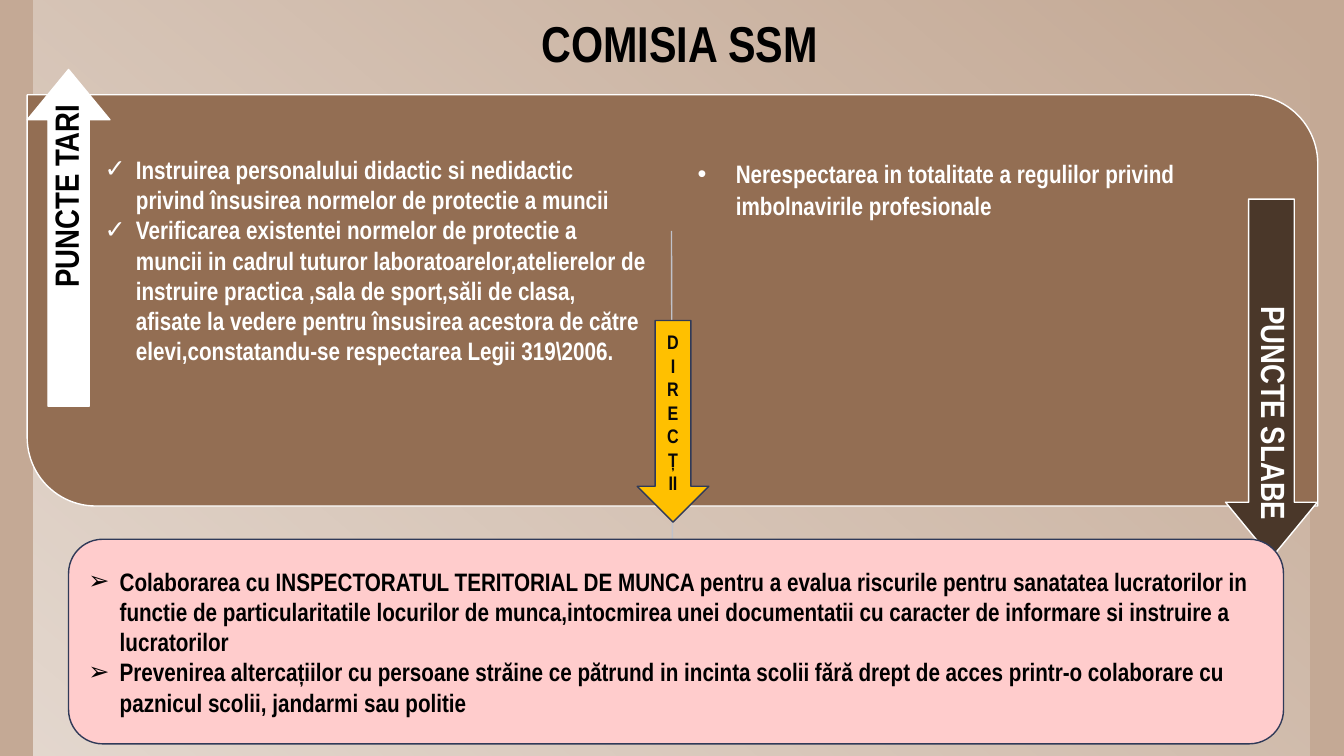
import pptx
import pptx.dml.color
import pptx.enum.shapes
import pptx.enum.text
import pptx.oxml.ns
import pptx.util
from dataclasses import dataclass
from lxml import etree

Inches, Pt = pptx.util.Inches, pptx.util.Pt
SHAPE = pptx.enum.shapes.MSO_SHAPE
ANCHOR = pptx.enum.text.MSO_ANCHOR
ALIGN = pptx.enum.text.PP_ALIGN
qn = pptx.oxml.ns.qn


@dataclass(frozen=True)
class Theme:
    font: str = "Arial Narrow"
    background: str = "C4A995"
    white: str = "FFFFFF"
    black: str = "000000"
    panel: str = "936E53"
    weak: str = "4A3729"
    pink: str = "FFCCCC"
    gold: str = "FFC000"
    gold_text: str = "080808"
    outline: str = "303A58"
    divider: str = "C0C2CA"
    title_size: int = 36
    label_size: int = 24
    body_size: int = 18
    small_size: int = 14


def rgb(color):
    return pptx.dml.color.RGBColor.from_string(color)


class SlideBuilder:
    def __init__(self, slide, theme):
        self.slide = slide
        self.theme = theme
        fill = slide.background.fill
        fill.solid()
        fill.fore_color.rgb = rgb(theme.background)

    def shape(self, kind, box, fill=None, line=None, adj=(), rotation=0):
        sp = self.slide.shapes.add_shape(kind, *map(Inches, box))
        sp.shadow.inherit = False
        sp.rotation = rotation
        for i, value in enumerate(adj):
            sp.adjustments[i] = value
        if fill:
            sp.fill.solid()
            sp.fill.fore_color.rgb = rgb(fill)
        if line:
            sp.line.color.rgb = rgb(line)
            sp.line.width = Pt(1)
        else:
            sp.line.fill.background()
        return sp

    def glow(self, box, angle, opacities):
        sp = self.shape(SHAPE.RECTANGLE, box)
        sp.fill.gradient()
        sp.fill.gradient_angle = 360 - angle  # clockwise to counter-clockwise
        for stop in sp.fill.gradient_stops:
            stop.color.rgb = rgb(self.theme.white)
        for color, opacity in zip(sp._element.spPr.iter(qn("a:srgbClr")), opacities):
            etree.SubElement(color, qn("a:alpha"), val=str(opacity * 1000))

    def line(self, start, end, color):
        cx = self.slide.shapes.add_connector(
            pptx.enum.shapes.MSO_CONNECTOR.STRAIGHT, *map(Inches, start + end))
        cx.line.color.rgb = rgb(color)
        cx.line.width = Pt(1)
        etree.SubElement(cx._element.spPr, qn("a:effectLst"))

    def textbox(self, box, rotation=0):
        sp = self.slide.shapes.add_textbox(*map(Inches, box))
        sp.rotation = rotation
        return sp

    def add_text(self, sp, texts, size, color, align=ALIGN.LEFT, anchor=ANCHOR.TOP,
                 spacing=None, bullet=None, indent=0.31, inset=(0.1, 0.05)):
        tf = sp.text_frame
        tf.word_wrap = True
        tf.vertical_anchor = anchor
        tf.margin_left = tf.margin_right = Inches(inset[0])
        tf.margin_top = tf.margin_bottom = Inches(inset[1])
        for i, text in enumerate(texts):
            p = tf.add_paragraph() if i else tf.paragraphs[0]
            p.alignment = align
            if spacing:
                p.line_spacing = spacing
            if bullet:
                pPr = p._p.get_or_add_pPr()
                pPr.set("marL", str(Inches(indent)))
                pPr.set("indent", str(-Inches(indent)))
                etree.SubElement(pPr, qn("a:buFont"), typeface="Arial")
                etree.SubElement(pPr, qn("a:buChar"), char=bullet)
            r = p.add_run()
            r.text = text
            r.font.name = self.theme.font
            r.font.size = Pt(size)
            r.font.bold = True
            r.font.color.rgb = rgb(color)

    def side_arrow(self, text, arrow_box, text_box, rotation, fill, color):
        self.shape(SHAPE.RIGHT_ARROW, arrow_box, fill, self.theme.white,
                   (0.498, 0.607), rotation)
        self.add_text(self.textbox(text_box, rotation), [text], self.theme.label_size,
                      color, ALIGN.RIGHT, ANCHOR.MIDDLE, 0.9, inset=(0.1, 0.1))


def main():
    prs = pptx.Presentation()
    prs.slide_width, prs.slide_height = Inches(13.33), Inches(7.5)
    t = Theme()
    s = SlideBuilder(prs.slides.add_slide(prs.slide_layouts[6]), t)

    # Backdrop and title
    s.glow((0.33, 0, 12.66, 7.5), 130, (0, 55))
    s.add_text(s.textbox((1.15, -0.2, 11.18, 0.99)), ["COMISIA SSM"], t.title_size,
               t.black, ALIGN.CENTER, ANCHOR.BOTTOM, 0.85, inset=(0.13, 0.07))

    # Panel with its divider and side arrows
    s.shape(SHAPE.ROUND_2_DIAG_RECTANGLE, (0.27, 0.94, 12.8, 4.08), t.panel, t.white,
            (0, 0.167))
    s.line((6.66, 2.29), (6.67, 5.77), t.divider)
    s.side_arrow("PUNCTE TARI", (-0.99, 1.95, 3.34, 0.82), (-0.87, 2.28, 3.09, 0.41),
                 270, t.white, t.black)
    s.side_arrow("PUNCTE SLABE", (10.83, 3.3, 3.56, 0.91), (10.97, 3.39, 3.29, 0.45),
                 90, t.weak, t.white)

    # Strengths and weaknesses
    s.add_text(s.textbox((0.94, 1.48, 5.57, 2.22)), [
        "Instruirea personalului didactic si nedidactic privind însusirea normelor "
        "de protectie a muncii",
        "Verificarea existentei normelor de protectie a muncii in cadrul tuturor "
        "laboratoarelor,atelierelor de instruire practica ,sala de sport,săli de clasa, "
        "afisate la vedere pentru însusirea acestora de către elevi,constatandu-se "
        "respectarea Legii 319\\2006.",
    ], t.body_size, t.white, bullet="✓")
    s.add_text(s.textbox((6.82, 1.5, 5.2, 0.72)), [
        "Nerespectarea in totalitate a regulilor privind imbolnavirile profesionale",
    ], t.body_size, t.white, spacing=1.07, bullet="•", indent=0.38)

    # Directions
    directions = s.shape(SHAPE.ROUNDED_RECTANGLE, (0.68, 5.35, 12.05, 2.03), t.pink,
                         t.outline)
    s.add_text(directions, [
        "Colaborarea cu INSPECTORATUL TERITORIAL DE MUNCA pentru a evalua riscurile "
        "pentru sanatatea lucratorilor in functie de particularitatile locurilor de "
        "munca,intocmirea unei documentatii cu caracter de informare si instruire a "
        "lucratorilor",
        "Prevenirea altercațiilor cu persoane străine ce pătrund in incinta scolii fără "
        "drept de acces printr-o colaborare cu paznicul scolii, jandarmi sau politie",
    ], t.body_size, t.black, anchor=ANCHOR.MIDDLE, bullet="➢")
    arrow = s.shape(SHAPE.DOWN_ARROW, (6.32, 3.18, 0.71, 2), t.gold, t.outline)
    s.add_text(arrow, ["DIRECȚ", "II"], t.small_size, t.gold_text, ALIGN.CENTER,
               ANCHOR.MIDDLE)

    prs.save("out.pptx")


if __name__ == "__main__":
    main()
